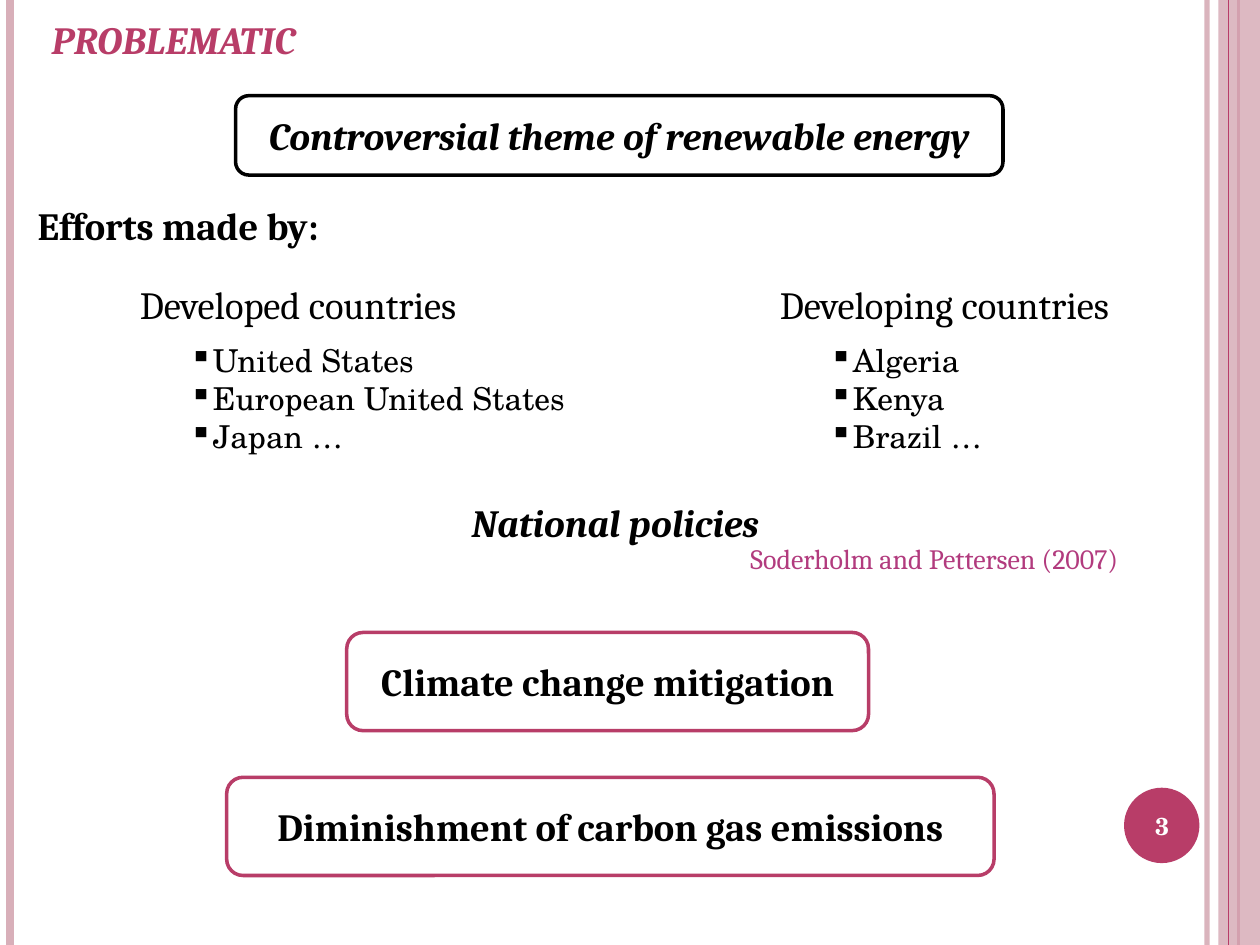
from lxml import etree
from pptx import Presentation
from pptx.dml.color import RGBColor
from pptx.enum.shapes import MSO_CONNECTOR, MSO_SHAPE
from pptx.enum.text import MSO_ANCHOR, MSO_AUTO_SIZE, PP_ALIGN
from pptx.oxml.ns import qn
from pptx.util import Cm, Pt

LINE = MSO_CONNECTOR.STRAIGHT
RECT, ROUND, OVAL = MSO_SHAPE.RECTANGLE, MSO_SHAPE.ROUNDED_RECTANGLE, MSO_SHAPE.OVAL
MID, LEFT, CENTER = MSO_ANCHOR.MIDDLE, PP_ALIGN.LEFT, PP_ALIGN.CENTER
GROW = MSO_AUTO_SIZE.SHAPE_TO_FIT_TEXT

THEME = {
    "pale": "D8AFB9", "rose": "B83D68", "plum": "B23B7E",
    "black": "000000", "white": "FFFFFF",
    "head": "Cambria", "body": "TeX Gyre Schola",
    "big": 22, "list": 18, "cite": 16, "page": 14,
}
WIDE, HIGH = 25.4, 19.05

# Side rules: x, colour, points, opacity in percent
BACK = [(24.33, "pale", 3, 93), (0.2, "pale", 4.5, 100), (24.97, "rose", 1.5, 100)]
FRONT = [(24.77, "rose", 0.75, 100)]

# Framed text: text, place, line colour, italic
FRAMES = [
    ("Controversial theme of renewable energy", (4.75, 1.93, 15.47, 1.6), "black", True),
    ("Climate change mitigation", (6.99, 12.75, 10.52, 1.98), "rose", False),
    ("Diminishment of carbon gas emissions", (4.57, 15.67, 15.47, 1.98), "rose", False),
]

# Free text: text, place, wrap, style
LABELS = [
    ("PROBLEMATIC", (0.79, 0.2, 14.48, 1.19), True,
     {"color": "rose", "bold": True, "italic": True}),
    ("Efforts made by:", (0.51, 3.94, 6.53, 1.19), False, {"bold": True}),
    ("National policies", (8.53, 9.93, 7.75, 1.19), True,
     {"bold": True, "italic": True, "align": CENTER}),
    ("Soderholm and Pettersen (2007)", (14.88, 10.8, 8.48, 0.94), False,
     {"size": "cite", "color": "plum"}),
]

# Country groups: heading, left, heading width, list width, members
GROUPS = [
    ("Developed countries", 2.57, 7.57, 8.33,
     ["United States", "European United States", "Japan …"]),
    ("Developing countries", 15.47, 7.77, 5.16, ["Algeria", "Kenya", "Brazil …"]),
]
HEAD_TOP, LIST_TOP, INSET, HANG = 5.54, 6.76, 1.0, 0.38


def paint(name):
    return RGBColor.from_string(THEME[name])


def fade(fill, percent):
    """Set the opacity of a solid fill's colour element."""
    etree.SubElement(fill.find(".//" + qn("a:srgbClr")), qn("a:alpha"),
                     val=str(percent * 1000))


def style(frame, font="head", size="big", color="black", bold=False,
          italic=False, align=LEFT):
    for para in frame.paragraphs:
        para.alignment = align
        for run in para.runs:
            face = run.font
            face.name, face.size = THEME[font], Pt(THEME[size])
            face.bold, face.italic = bold, italic
            face.color.rgb = paint(color)


def rule(slide, x, color, width, alpha):
    line = slide.shapes.add_connector(LINE, Cm(x), 0, Cm(x), Cm(HIGH))
    line.line.color.rgb, line.line.width = paint(color), Pt(width)
    props = line._element.spPr
    if alpha < 100:
        fade(props, alpha)
    etree.SubElement(props, qn("a:effectLst"))


def solid(slide, kind, place, fill, edge=None):
    shape = slide.shapes.add_shape(kind, *map(Cm, place))
    shape.shadow.inherit = False
    shape.fill.solid()
    shape.fill.fore_color.rgb = paint(fill)
    if edge:
        shape.line.color.rgb, shape.line.width = paint(edge), Pt(2)
    else:
        shape.line.fill.background()
    return shape


def label(slide, text, place, wrap=True, **look):
    frame = slide.shapes.add_textbox(*map(Cm, place)).text_frame
    frame.word_wrap, frame.auto_size = wrap, GROW
    frame.text = text
    style(frame, **look)
    return frame


def bullet(frame):
    for para in frame.paragraphs:
        props = para._p.get_or_add_pPr()
        props.set("marL", str(Cm(HANG)))
        props.set("indent", str(-Cm(HANG)))
        etree.SubElement(props, qn("a:buChar"), char="▪")


def main():
    deck = Presentation()
    deck.slide_width, deck.slide_height = Cm(WIDE), Cm(HIGH)
    slide = deck.slides.add_slide(deck.slide_layouts[6])

    for item in BACK:
        rule(slide, *item)
    band = solid(slide, RECT, (24.56, 0, 0.84, HIGH), "pale")
    fade(band._element.spPr, 87)
    for item in FRONT:
        rule(slide, *item)

    solid(slide, OVAL, (22.66, 15.88, 1.52, 1.52), "rose")
    page = label(slide, "3", (22.58, 15.93, 1.7, 1.45), font="body",
                 size="page", color="white", bold=True, align=CENTER)
    page.auto_size, page.vertical_anchor = MSO_AUTO_SIZE.NONE, MID

    for text, place, edge, italic in FRAMES:
        frame = solid(slide, ROUND, place, "white", edge).text_frame
        frame.text, frame.vertical_anchor = text, MID
        style(frame, bold=True, italic=italic, align=CENTER)

    for text, place, wrap, look in LABELS:
        label(slide, text, place, wrap, **look)

    for head, left, wide, span, names in GROUPS:
        label(slide, head, (left, HEAD_TOP, wide, 1.19), False)
        bullet(label(slide, "\n".join(names), (left + INSET, LIST_TOP, span, 2.57),
                     font="body", size="list"))

    deck.save("out.pptx")


if __name__ == "__main__":
    main()
